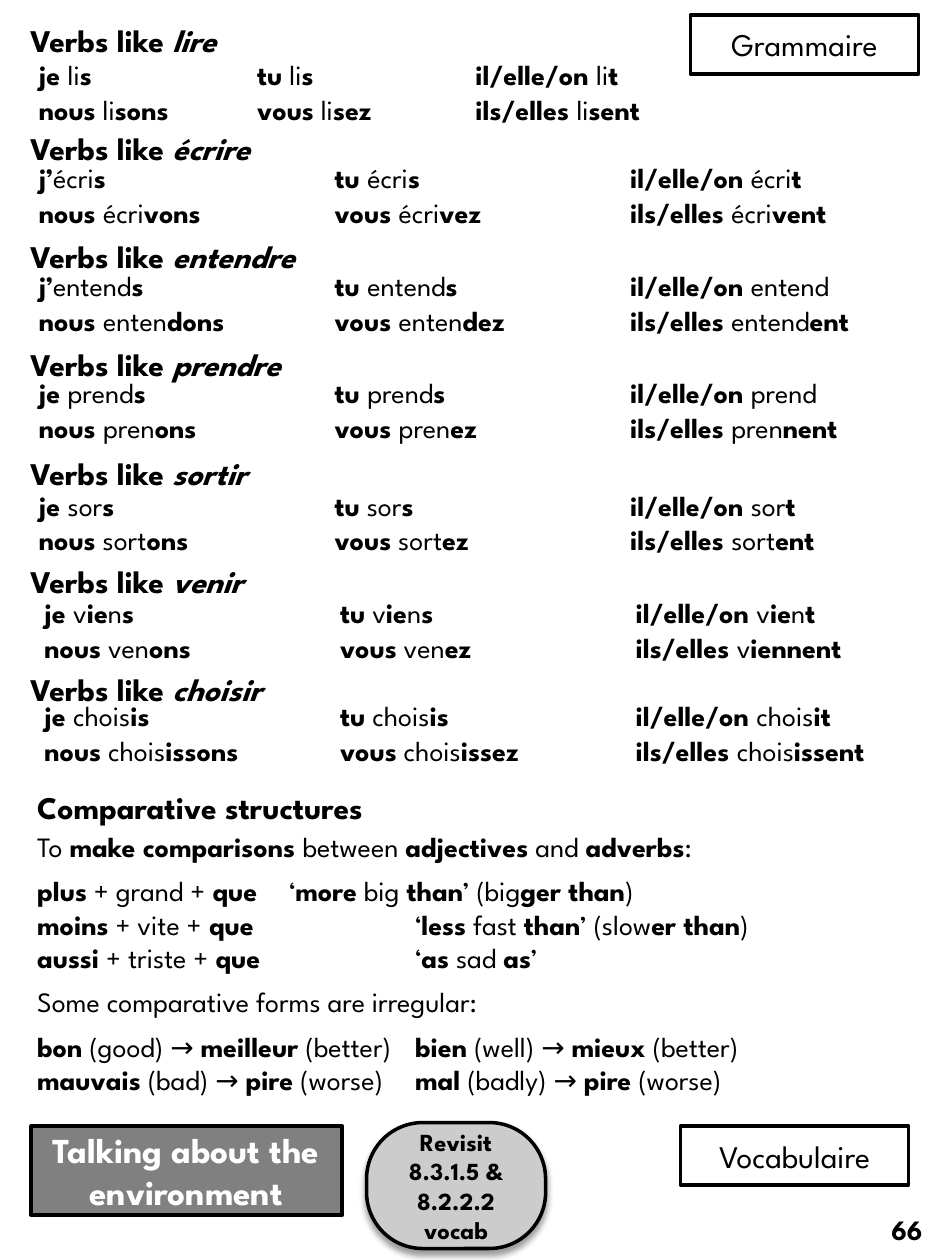
from lxml.etree import SubElement
from pptx import Presentation
from pptx.dml.color import RGBColor
from pptx.enum.shapes import MSO_SHAPE
from pptx.enum.text import MSO_ANCHOR, MSO_AUTO_SIZE, PP_ALIGN
from pptx.oxml.ns import qn
from pptx.util import Cm, Pt

FACE = "League Spartan"
PLAIN = "{2D5ABB26-0587-4C30-8999-92F81FD0307C}"  # no style, no grid


def color(fmt, code):
    fmt.rgb = RGBColor.from_string(code)


def write(frame, text, size=16, ink="000000", bold=False, slant=False,
          align=PP_ALIGN.LEFT, anchor=MSO_ANCHOR.TOP, gaps=(), tabs=()):
    """Fill a frame; parts between asterisks are bold, or also italic if slant."""
    frame.vertical_anchor = anchor
    for i, line in enumerate(text.split("\n")):
        para = frame.paragraphs[0] if i == 0 else frame.add_paragraph()
        if tabs:
            stops = SubElement(para._p.get_or_add_pPr(), qn("a:tabLst"))
            for tab in tabs:
                SubElement(stops, qn("a:tab"), pos=str(Cm(tab)), algn="l")
        para.alignment = align
        if i in gaps:
            para.space_before = Pt(6)
        for j, part in enumerate(line.split("*")):
            if part:
                run = para.add_run()
                run.text = part
                font = run.font
                font.name, font.size = FACE, Pt(size)
                font.bold = bold or j % 2 == 1
                font.italic = slant and j % 2 == 1
                color(font.color, ink)


deck = Presentation()
deck.slide_width, deck.slide_height = Cm(19.05), Cm(25.4)
slide = deck.slides.add_slide(deck.slide_layouts[5])
shapes = slide.shapes

# Page number
page = shapes.add_textbox(Cm(14.4), Cm(23.9), Cm(4.45), Cm(1.75)).text_frame
page.word_wrap = True
write(page, "66", bold=True, align=PP_ALIGN.RIGHT, anchor=MSO_ANCHOR.MIDDLE)

# Verb groups: name, heading width, table left, column width, anchor, forms
TOP, MID = MSO_ANCHOR.TOP, MSO_ANCHOR.MIDDLE
verbs = [
    ("lire", 4.65, 0.53, 4.4, MID,
     ["*je *li*s", "*tu* li*s", "*il/elle/on *li*t",
      "*nous* li*sons", "*vous* li*sez", "*ils/elles *li*sent"]),
    ("écrire", 5.54, 0.53, 5.96, TOP,
     ["*j’*écri*s", "*tu *écri*s", "*il/elle/on *écri*t",
      "*nous *écri*vons", "*vous *écri*vez", "*ils/elles *écri*vent"]),
    ("entendre", 6.55, 0.53, 5.96, TOP,
     ["*j’*entend*s", "*tu *entend*s", "*il/elle/on *entend",
      "*nous *enten*dons", "*vous *enten*dez", "*ils/elles *entend*ent"]),
    ("prendre", 6.2, 0.53, 5.96, TOP,
     ["*je *prend*s", "*tu *prend*s", "*il/elle/on *prend",
      "*nous *pren*ons", "*vous *pren*ez", "*ils/elles *pren*nent"]),
    ("sortir", 5.18, 0.53, 5.96, MID,
     ["*je *sor*s", "*tu* sor*s", "*il/elle/on *sor*t",
      "*nous* sort*ons", "*vous* sort*ez", "*ils/elles *sort*ent"]),
    ("venir", 5.26, 0.64, 5.96, MID,
     ["*je *v*ie*n*s", "*tu* v*ie*n*s", "*il/elle/on *v*ie*n*t",
      "*nous* ven*ons", "*vous* ven*ez", "*ils/elles *v*iennent"]),
    ("choisir", 5.74, 0.64, 5.96, TOP,
     ["*je *chois*is", "*tu* chois*is", "*il/elle/on *chois*it",
      "*nous* chois*issons", "*vous* chois*issez", "*ils/elles *chois*issent"]),
]
for i, (verb, wide, left, col, anchor, forms) in enumerate(verbs):
    head = shapes.add_textbox(Cm(0.36), Cm(0.3 + 2.18 * i), Cm(wide), Cm(1.02)).text_frame
    head.word_wrap = False
    head.auto_size = MSO_AUTO_SIZE.SHAPE_TO_FIT_TEXT
    write(head, f"Verbs like *{verb}", size=18, bold=True, slant=True)

    table = shapes.add_table(2, 3, Cm(left), Cm(1.24 + 2.17 * i),
                             Cm(3 * col), Cm(1.4)).table
    table.first_row = table.horz_banding = False
    table._tbl.tblPr.find(qn("a:tableStyleId")).text = PLAIN
    for column in table.columns:
        column.width = Cm(col)
    for cell, form in zip(table.iter_cells(), forms):
        cell.fill.background()
        cell.margin_top = cell.margin_bottom = 0
        write(cell.text_frame, form)
        cell.vertical_anchor = anchor

# Comparatives
head = shapes.add_textbox(Cm(0.5), Cm(15.77), Cm(15.7), Cm(1.02)).text_frame
head.word_wrap = True
write(head, "Comparative structures", size=18, bold=True)

rules = [
    "To *make comparisons *between *adjectives* and *adverbs*:",
    "*plus* + grand + *que*\t‘*more* big *than*’ (big*ger than*)",
    "*moins* + vite + *que*\t\t‘*less* fast *than*’ (slow*er than*)",
    "*aussi* + triste + *que*\t\t‘*as* sad *as*’",
    "Some comparative forms are irregular:",
    "*bon* (good) → *meilleur* (better)\t*bien* (well) → *mieux* (better)",
    "*mauvais* (bad) → *pire* (worse)\t*mal* (badly) → *pire* (worse)",
]
body = shapes.add_textbox(Cm(0.5), Cm(16.6), Cm(18.55), Cm(5.7)).text_frame
body.word_wrap = True
write(body, "\n".join(rules), gaps=(1, 4, 5), tabs=(5.08, 7.62))

# Framed labels
RECT, ROUND = MSO_SHAPE.RECTANGLE, MSO_SHAPE.ROUNDED_RECTANGLE
labels = [
    (RECT, 13.92, 0.3, 4.6, 1.19, "FFFFFF", "Grammaire", 18, False),
    (RECT, 13.72, 22.7, 4.6, 1.19, "FFFFFF", "Vocabulaire", 18, False),
    (RECT, 0.63, 22.7, 6.27, 1.8, "808080", "", 20, True),
    (ROUND, 7.39, 22.63, 3.61, 2.54, "CCCCCC", "Revisit 8.3.1.5 & 8.2.2.2 vocab", 14, True),
]
for kind, left, top, wide, high, fill, text, size, bold in labels:
    box = shapes.add_shape(kind, Cm(left), Cm(top), Cm(wide), Cm(high))
    box.shadow.inherit = False
    box.fill.solid()
    color(box.fill.fore_color, fill)
    color(box.line.color, "000000")
    box.line.width = Pt(2)
    write(box.text_frame, text, size=size, bold=bold,
          align=PP_ALIGN.CENTER, anchor=MID)

# The last label is the rounded one, with a soft shadow below
box.adjustments[0] = 0.447
glow = SubElement(box._element.spPr.find(qn("a:effectLst")), qn("a:outerShdw"),
                  blurRad=str(Pt(4)), dist=str(Pt(3)), dir="5400000", rotWithShape="0")
shade = SubElement(glow, qn("a:srgbClr"), val="000000")
SubElement(shade, qn("a:alpha"), val="40000")

# Title, in front of its grey panel
title = shapes.title
title.left, title.top, title.width, title.height = Cm(0.63), Cm(22.75), Cm(6.25), Cm(1.7)
title.text_frame.auto_size = MSO_AUTO_SIZE.NONE
write(title.text_frame, "Talking about the environment", size=20, ink="FFFFFF",
      bold=True, align=PP_ALIGN.CENTER, anchor=MID)
shapes._spTree.append(title._element)

deck.save("out.pptx")
